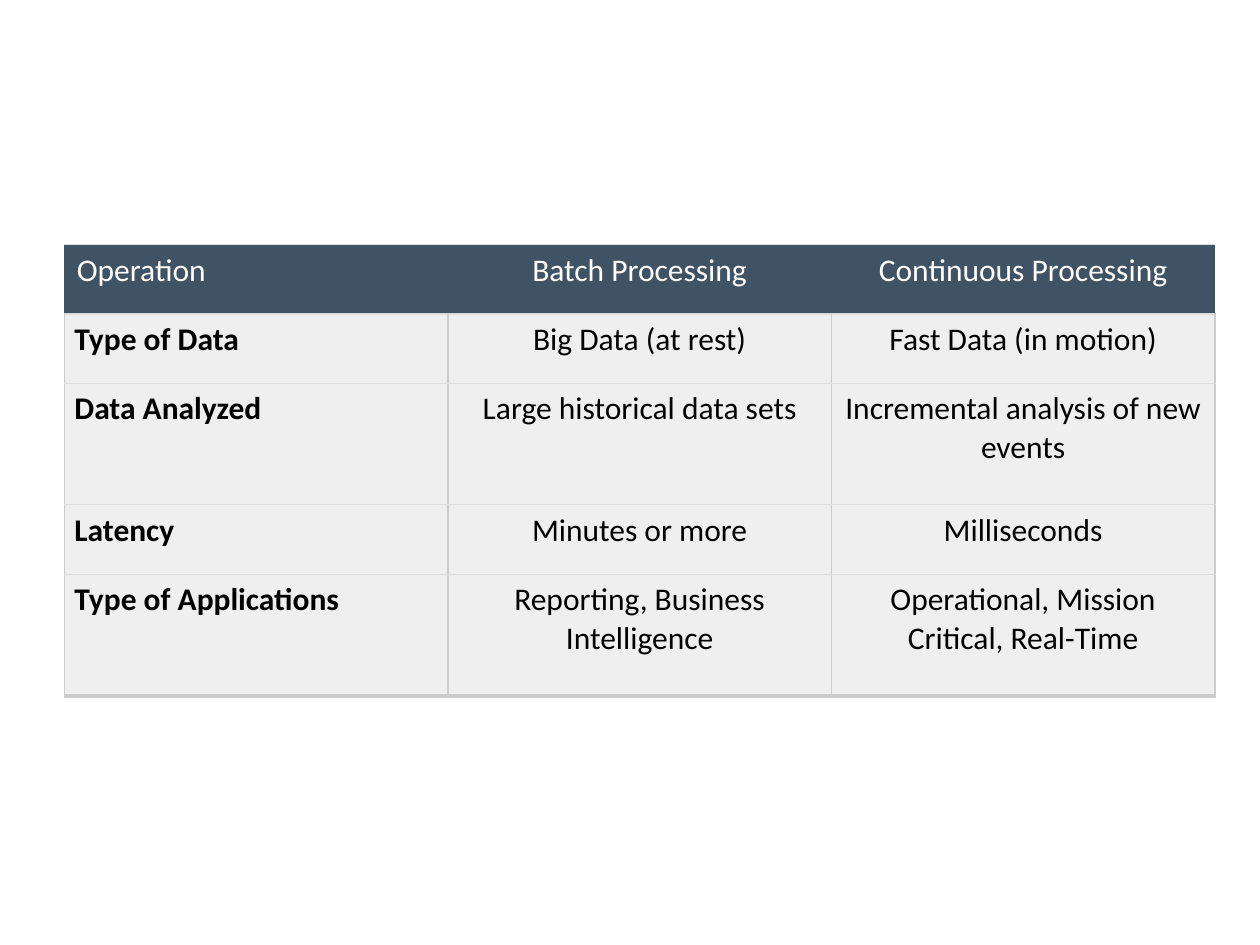
from dataclasses import dataclass

from lxml import etree
from pptx import Presentation
from pptx import util as u
from pptx.dml.color import RGBColor
from pptx.enum import text
from pptx.oxml import ns


@dataclass(frozen=True)
class Theme:
    font: str = "Calibri"
    size: int = 18
    header_fill: str = "3F5364"
    header_text: str = "FFFFFF"
    body_fill: str = "EFEFEF"
    body_text: str = "000000"
    side_line: tuple = ("CCCCCC", 1)
    row_line: tuple = ("DDDDDD", 0.75)
    bottom_line: tuple = ("CCCCCC", 3)


ROWS = [
    ("Operation", "Batch Processing", "Continuous Processing"),
    ("Type of Data", "Big Data (at rest)", "Fast Data (in motion)"),
    ("Data Analyzed", "Large historical data sets", "Incremental analysis of new events"),
    ("Latency", "Minutes or more", "Milliseconds"),
    ("Type of Applications", "Reporting, Business Intelligence",
     "Operational, Mission Critical, Real-Time"),
]
ONE_LINE, TWO_LINES = 1.4, 2.45
ROW_HEIGHTS = [ONE_LINE, ONE_LINE, TWO_LINES, ONE_LINE, TWO_LINES]
COLUMN_WIDTH = 7.73


class SlideBuilder:
    """Draws styled elements on the current slide."""

    def __init__(self, slide, theme):
        self.slide = slide
        self.theme = theme

    def apply(self, target, values):
        for name, value in values.items():
            setattr(target, name, value)

    def border(self, cell, side, line):
        properties = cell._tc.get_or_add_tcPr()
        element = etree.SubElement(properties, ns.qn(f"a:ln{side}"))
        if line is None:
            etree.SubElement(element, ns.qn("a:noFill"))
            return
        color, width = line
        element.set("w", str(u.Pt(width)))
        fill = etree.SubElement(element, ns.qn("a:solidFill"))
        etree.SubElement(fill, ns.qn("a:srgbClr")).set("val", color)

    def cell(self, cell, content, header, label, last):
        theme = self.theme
        side = None if header else theme.side_line
        bottom = theme.bottom_line if last else theme.row_line
        for edge, line in zip("LRTB", (side, side, theme.row_line, bottom)):
            self.border(cell, edge, line)
        cell.fill.solid()
        cell.fill.fore_color.rgb = RGBColor.from_string(
            theme.header_fill if header else theme.body_fill)
        inset = u.Cm(0.25 if header and label else 0.2)
        self.apply(cell, {
            "text": content,
            "margin_left": inset,
            "margin_right": inset,
            "margin_top": u.Cm(0.13),
            "margin_bottom": u.Cm(0.13),
            "vertical_anchor": text.MSO_ANCHOR.TOP,
        })
        paragraph = cell.text_frame.paragraphs[0]
        paragraph.alignment = text.PP_ALIGN.LEFT if label else text.PP_ALIGN.CENTER
        font = paragraph.runs[0].font
        self.apply(font, {
            "name": theme.font,
            "size": u.Pt(theme.size),
            "bold": label and not header,
        })
        font.color.rgb = RGBColor.from_string(
            theme.header_text if header else theme.body_text)

    def table(self, left, top, column_width, row_heights, rows):
        columns = len(rows[0])
        table = self.slide.shapes.add_table(
            len(rows), columns, u.Cm(left), u.Cm(top),
            u.Cm(column_width * columns), u.Cm(sum(row_heights))).table
        self.apply(table, {"first_row": False, "horz_banding": False})
        for column in table.columns:
            column.width = u.Cm(column_width)
        for row_index, (height, contents) in enumerate(zip(row_heights, rows)):
            table.rows[row_index].height = u.Cm(height)
            for column_index, content in enumerate(contents):
                self.cell(table.cell(row_index, column_index), content,
                          header=row_index == 0, label=column_index == 0,
                          last=row_index == len(rows) - 1)


def main():
    presentation = Presentation()
    presentation.slide_width = u.Cm(25.4)
    presentation.slide_height = u.Cm(19.05)
    slide = presentation.slides.add_slide(presentation.slide_layouts[6])
    builder = SlideBuilder(slide, Theme())
    builder.table(1.3, 4.93, COLUMN_WIDTH, ROW_HEIGHTS, ROWS)
    presentation.save("out.pptx")


if __name__ == "__main__":
    main()
